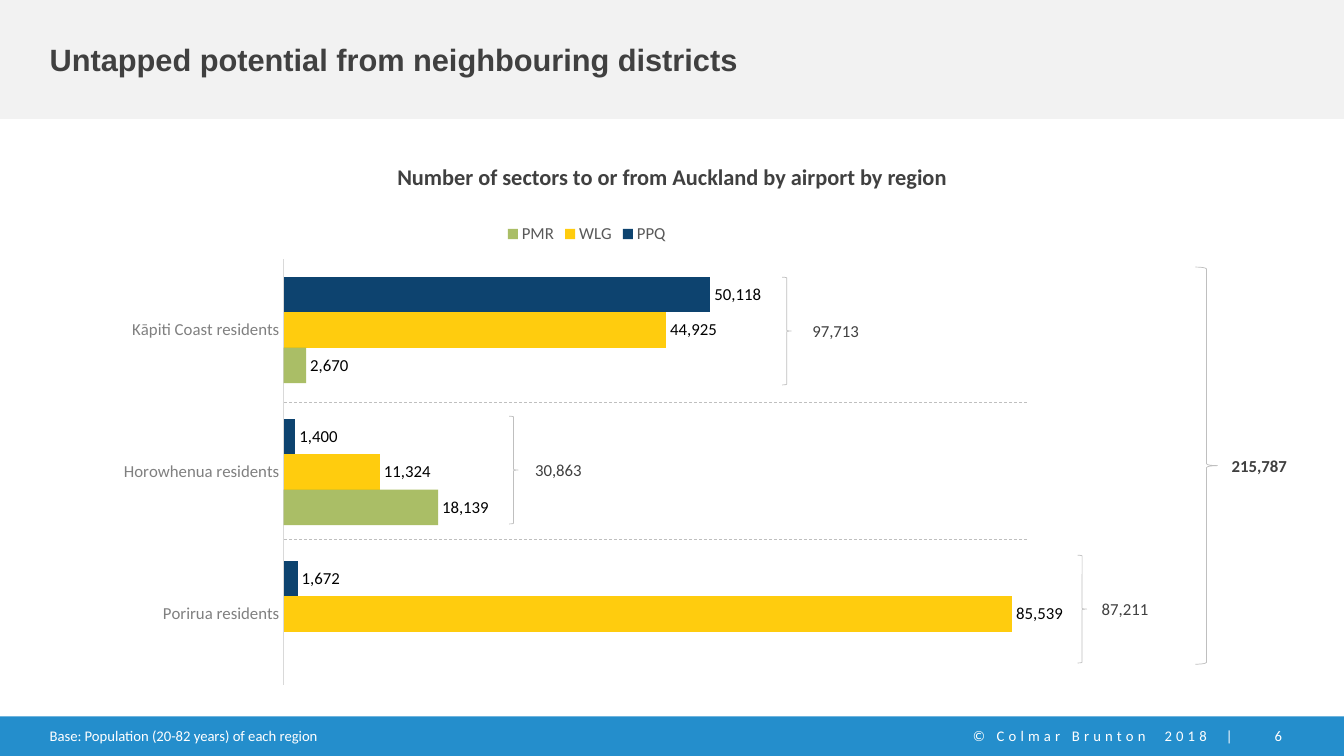
from lxml.etree import SubElement
from pptx import Presentation
from pptx.chart.data import CategoryChartData
from pptx.dml.color import RGBColor
from pptx.enum.chart import XL_CHART_TYPE, XL_LABEL_POSITION, XL_LEGEND_POSITION, XL_TICK_MARK
from pptx.enum.dml import MSO_LINE
from pptx.enum.shapes import MSO_CONNECTOR, MSO_SHAPE
from pptx.enum.text import MSO_ANCHOR, PP_ALIGN
from pptx.oxml import parse_xml
from pptx.oxml.ns import nsdecls, qn
from pptx.util import Pt

WHITE = RGBColor(0xFF, 0xFF, 0xFF)
BLACK = RGBColor(0, 0, 0)
DARK = RGBColor(0x40, 0x40, 0x40)
LEGEND_GREY = RGBColor(0x59, 0x59, 0x59)
LABEL_GREY = RGBColor(0x80, 0x80, 0x80)
LINE_GREY = RGBColor(0xBF, 0xBF, 0xBF)
AXIS_GREY = RGBColor(0xD9, 0xD9, 0xD9)
HEADER_GREY = RGBColor(0xF2, 0xF2, 0xF2)
FOOTER_BLUE = RGBColor(0x24, 0x8E, 0xCC)
NAVY = RGBColor(0x0D, 0x43, 0x6F)
YELLOW = RGBColor(0xFF, 0xCC, 0x0E)
GREEN = RGBColor(0x9C, 0xB3, 0x4C)

TITLE = "Untapped potential from neighbouring districts"
CHART_TITLE = "Number of sectors to or from Auckland by airport by region"
BASE_NOTE = "Base: Population (20-82 years) of each region"
COPYRIGHT = "© Colmar Brunton  2018  |"
PAGE = "6"
REGIONS = ["Kāpiti Coast residents", "Horowhenua residents", "Porirua residents"]
AIRPORTS = [  # name, values, colour, opacity in %
    ("PPQ", (50118, 1400, 1672), NAVY, 100),
    ("WLG", (44925, 11324, 85539), YELLOW, 100),
    ("PMR", (2670, 18139, None), GREEN, 85),
]
REGION_TOTALS = [("97,713", 558.7, 573.1), ("30,863", 363.6, 375.1), ("87,211", 769.7, 779.8)]
GRAND_TOTAL = "215,787"

SLIDE_W, SLIDE_H = 960, 540
HEADER_H, FOOTER_Y = 85, 511.7
FOOTER_TEXT_Y, FOOTER_TEXT_H = 515.5, 20.2
CHART = (74.2, 151.9, 689.8, 344.2)
PLOT = {"x": 0.186, "y": 0.096, "w": 0.794, "h": 0.884}
AXIS_MAX = 90000
BRACE_Y, BRACE_W, BRACE_H, REGION_STEP = 198, 6.5, 77, 99.3
TOTAL_W, TOTAL_H = 71.3, 21.8
DIVIDER_X, DIVIDER_END, DIVIDER_YS = 203, 734.4, (287.3, 385.2)


def style_font(font, size, color, name="Calibri", bold=False):
    font.name, font.size, font.bold = name, Pt(size), bold
    font.color.rgb = color


def add_text(s, text, x, y, w, h, size, color, name="Calibri", bold=False,
             align=PP_ALIGN.LEFT, anchor=MSO_ANCHOR.MIDDLE, spacing=0):
    """Add one line of text; spacing is letter spacing in points."""
    tf = s.shapes.add_textbox(Pt(x), Pt(y), Pt(w), Pt(h)).text_frame
    tf.word_wrap = True
    tf.vertical_anchor = anchor
    p = tf.paragraphs[0]
    r = p.add_run()
    r.text = text
    p.alignment = align
    style_font(p.font, size, color, name, bold)
    if spacing:
        r.font._element.set("spc", str(spacing * 100))
    return tf


def add_band(s, y, h, color):
    sp = s.shapes.add_shape(MSO_SHAPE.RECTANGLE, 0, Pt(y), Pt(SLIDE_W), Pt(h))
    sp.shadow.inherit = False
    sp.fill.solid()
    sp.fill.fore_color.rgb = color
    sp.line.fill.background()


def add_brace(s, x, y, w, h):
    sp = s.shapes.add_shape(MSO_SHAPE.RIGHT_BRACE, Pt(x), Pt(y), Pt(w), Pt(h))
    sp.shadow.inherit = False
    sp.fill.background()
    sp.line.color.rgb = LINE_GREY
    sp.line.width = Pt(0.5)


def add_divider(s, y):
    line = s.shapes.add_connector(MSO_CONNECTOR.STRAIGHT, Pt(DIVIDER_X), Pt(y),
                                  Pt(DIVIDER_END), Pt(y))
    line.line.color.rgb = LINE_GREY
    line.line.width = Pt(0.5)
    line.line.dash_style = MSO_LINE.DASH
    SubElement(line._element.spPr, qn("a:effectLst"))


def fix_plot_area(chart):
    """Pin the inner plot area at the fractions in PLOT."""
    area = chart._chartSpace.chart.plotArea
    for old in area.findall(qn("c:layout")):
        area.remove(old)
    modes = "".join(f'<c:{k}Mode val="edge"/>' for k in "xy")
    sizes = "".join(f'<c:{k} val="{v}"/>' for k, v in PLOT.items())
    area.insert(0, parse_xml(
        f'<c:layout {nsdecls("c")}><c:manualLayout><c:layoutTarget val="inner"/>'
        f'{modes}{sizes}</c:manualLayout></c:layout>'))


def add_sector_chart(s):
    data = CategoryChartData(number_format="#,##0")
    data.categories = REGIONS
    for name, values, *_ in AIRPORTS:
        data.add_series(name, values)
    chart = s.shapes.add_chart(XL_CHART_TYPE.BAR_CLUSTERED, *map(Pt, CHART), data).chart
    style_font(chart.font, 10, BLACK)
    chart.has_title = False
    chart.has_legend = True
    chart.legend.position = XL_LEGEND_POSITION.TOP
    chart.legend.include_in_layout = False
    style_font(chart.legend.font, 12, LEGEND_GREY)

    regions = chart.category_axis
    regions.reverse_order = True
    regions.major_tick_mark = XL_TICK_MARK.NONE
    regions.format.line.color.rgb = AXIS_GREY
    regions.format.line.width = Pt(0.75)
    style_font(regions.tick_labels.font, 12, LABEL_GREY)
    sectors = chart.value_axis
    sectors.minimum_scale, sectors.maximum_scale = 0, AXIS_MAX
    sectors.has_major_gridlines = False
    sectors.visible = False

    plot = chart.plots[0]
    plot.gap_width, plot.overlap = 100, 0
    plot.vary_by_categories = False
    for series, (_, _, color, opacity) in zip(plot.series, AIRPORTS):
        fill = series.format.fill
        fill.solid()
        fill.fore_color.rgb = color
        if opacity < 100:
            rgb = series._element.find(".//" + qn("a:srgbClr"))
            SubElement(rgb, qn("a:alpha"), val=str(opacity * 1000))
        labels = series.data_labels
        labels.show_value = True
        labels.number_format, labels.number_format_is_linked = "#,##0", False
        labels.position = XL_LABEL_POSITION.OUTSIDE_END
        style_font(labels.font, 12, BLACK)
    fix_plot_area(chart)


def main():
    prs = Presentation()
    prs.slide_width, prs.slide_height = Pt(SLIDE_W), Pt(SLIDE_H)
    s = prs.slides.add_slide(prs.slide_layouts[6])

    add_band(s, 0, HEADER_H, HEADER_GREY)
    add_band(s, FOOTER_Y, SLIDE_H - FOOTER_Y, FOOTER_BLUE)
    add_text(s, TITLE, 28.4, 0, 774, HEADER_H, 22, DARK, "Arial", True)
    add_text(s, BASE_NOTE, 28.4, FOOTER_TEXT_Y, 645, FOOTER_TEXT_H, 10.5, WHITE)
    add_text(s, COPYRIGHT, 682, FOOTER_TEXT_Y, 206, FOOTER_TEXT_H, 10.5, WHITE,
             align=PP_ALIGN.RIGHT, spacing=3)
    page = add_text(s, PAGE, 888.5, FOOTER_TEXT_Y, 43.2, FOOTER_TEXT_H, 10.5, WHITE,
                    align=PP_ALIGN.RIGHT, spacing=3)
    page.margin_right = Pt(16)

    add_sector_chart(s)
    add_text(s, CHART_TITLE, 242.6, 113, 475.2, 26.6, 16, DARK, bold=True,
             align=PP_ALIGN.CENTER, anchor=MSO_ANCHOR.TOP)
    for y in DIVIDER_YS:
        add_divider(s, y)
    for i, (total, brace_x, text_x) in enumerate(REGION_TOTALS):
        y = BRACE_Y + i * REGION_STEP
        add_brace(s, brace_x, y, BRACE_W, BRACE_H)
        add_text(s, total, text_x, y + (BRACE_H - TOTAL_H) / 2, TOTAL_W, TOTAL_H, 12, DARK)
    add_brace(s, 853.9, 190.8, 15.8, 283.7)
    add_text(s, GRAND_TOTAL, 872.6, 321.8, TOTAL_W, TOTAL_H, 12, DARK, bold=True)

    prs.save("out.pptx")


if __name__ == "__main__":
    main()
